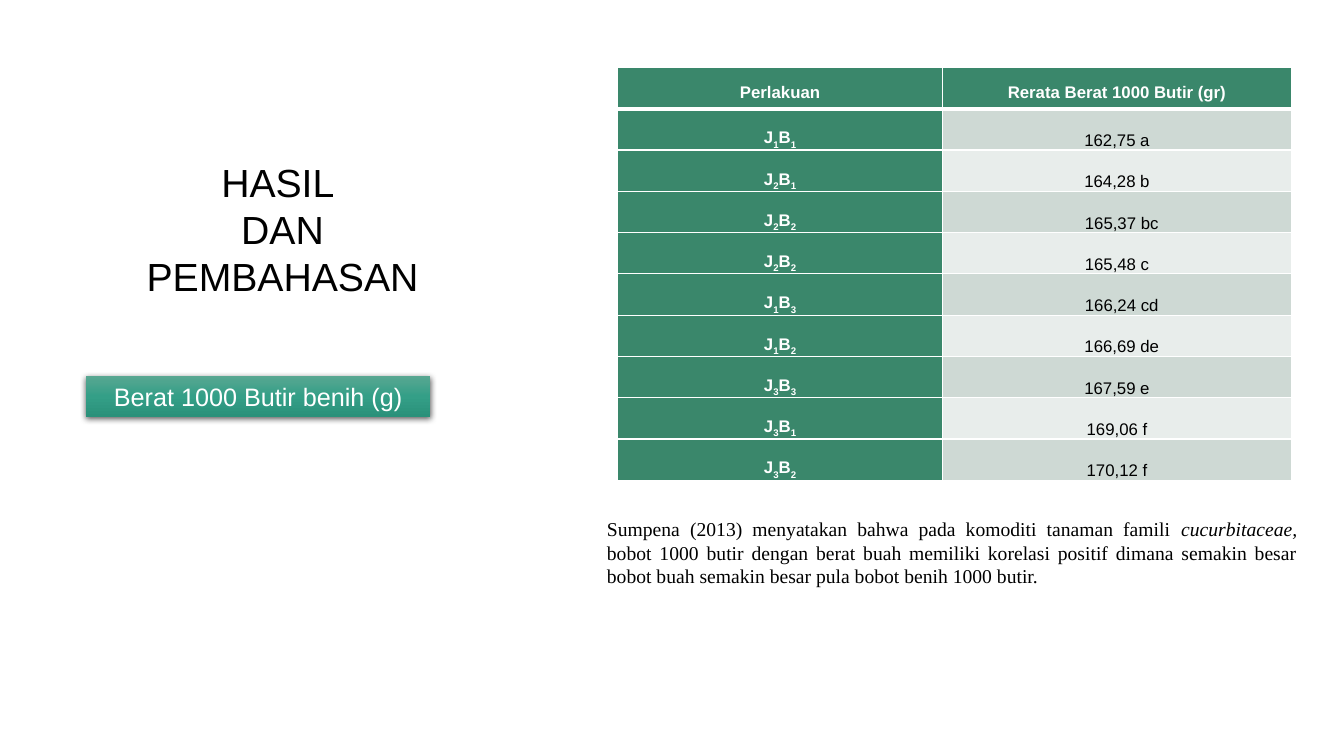
from copy import deepcopy
from dataclasses import dataclass

from pptx import Presentation
from pptx.dml.color import RGBColor
from pptx.enum.shapes import MSO_SHAPE
from pptx.enum.text import MSO_ANCHOR, MSO_AUTO_SIZE, PP_ALIGN
from pptx.oxml import parse_xml
from pptx.oxml.ns import nsdecls, qn
from pptx.util import Cm, Pt

RECT = MSO_SHAPE.RECTANGLE
TOP, MIDDLE, BOTTOM = MSO_ANCHOR.TOP, MSO_ANCHOR.MIDDLE, MSO_ANCHOR.BOTTOM
CENTER, JUSTIFY = PP_ALIGN.CENTER, PP_ALIGN.JUSTIFY
NO_FIT = MSO_AUTO_SIZE.NONE

# Content
TITLE = ["HASIL ", "DAN", "PEMBAHASAN"]
BADGE = "Berat 1000 Butir benih (g)"
QUOTE = [
    ("Sumpena (2013) menyatakan bahwa pada komoditi tanaman famili ", False),
    ("cucurbitaceae, ", True),
    ("bobot 1000 butir dengan berat buah memiliki korelasi positif dimana "
     "semakin besar bobot buah semakin besar pula bobot benih 1000 butir.", False),
]
HEAD = ["Perlakuan", "Rerata Berat 1000 Butir (gr)"]
ROWS = [
    ("J1B1", "162,75", "a"),
    ("J2B1", "164,28", "b"),
    ("J2B2", "165,37", "bc"),
    ("J2B2", "165,48", "c"),
    ("J1B3", "166,24", "cd"),
    ("J1B2", "166,69", "de"),
    ("J3B3", "167,59", "e"),
    ("J3B1", "169,06", "f"),
    ("J3B2", "170,12", "f"),
]

# Places: left, top, width, height
TITLE_BOX = (3.4, 3.86, 7.44, 3.84)
BADGE_BOX = (2.16, 9.47, 8.69, 1.03)
QUOTE_BOX = (15.04, 12.9, 17.91, 3.25)
GRID_AT = (15.57, 1.7)
COLS = (8.18, 8.8)
ROW = 1.04
PAD, SHIFT = 0.17, 0.24


@dataclass(frozen=True)
class Theme:
    sans: str = "Arial"
    serif: str = "Times New Roman"
    dark: str = "000000"
    light: str = "FFFFFF"
    green: str = "3A876B"
    bands: tuple = ("CED9D4", "E8EDEB")
    blend: tuple = ((0, "59A792"), (0.5, "349F87"), (1, "2A917A"))
    title: int = 28
    badge: int = 18
    quote: int = 14
    cell: int = 12
    thin: int = 1
    thick: int = 3


T = Theme()


def style(par, size, color, face=T.sans, align=CENTER, bold=False):
    par.alignment = align
    for run in par.runs:
        font = run.font
        font.name, font.size, font.bold = face, Pt(size), bold
        font.color.rgb = RGBColor.from_string(color)


def place(shape, box):
    shape.left, shape.top, shape.width, shape.height = map(Cm, box)
    frame = shape.text_frame
    frame.word_wrap = True
    frame.auto_size = NO_FIT
    frame.vertical_anchor = TOP
    return frame


def border(cell, row):
    edges = {"L": T.thin, "R": T.thin,
             "T": T.thick if row == 1 else T.thin,
             "B": T.thick if row == 0 else T.thin}
    props = cell._tc.get_or_add_tcPr()
    for side, width in edges.items():
        props.append(parse_xml(
            f'<a:ln{side} {nsdecls("a")} w="{Pt(width)}"><a:solidFill>'
            f'<a:srgbClr val="{T.light}"/></a:solidFill></a:ln{side}>'))


def dress(cell, row, fill, color, bold, shift=0):
    border(cell, row)
    cell.fill.solid()
    cell.fill.fore_color.rgb = RGBColor.from_string(fill)
    cell.margin_left, cell.margin_right = Cm(PAD + shift), Cm(PAD)
    cell.margin_top = cell.margin_bottom = 0
    cell.vertical_anchor = BOTTOM if row else MIDDLE
    par = cell.text_frame.paragraphs[0]
    par.line_spacing = 1.5
    style(par, T.cell, color, bold=bold)


def add_title(slide):
    frame = place(slide.shapes.title, TITLE_BOX)
    frame.text = "\n".join(TITLE)
    for par in frame.paragraphs:
        style(par, T.title, T.dark)


def add_quote(slide):
    frame = place(slide.placeholders[1], QUOTE_BOX)
    par = frame.paragraphs[0]
    for text, slant in QUOTE:
        run = par.add_run()
        run.text = text
        run.font.italic = slant
    style(par, T.quote, T.dark, T.serif, JUSTIFY)
    par.space_before = Pt(0)
    props = par._p.get_or_add_pPr()
    props.set("marL", "0")
    props.set("indent", "0")
    props.append(parse_xml(f'<a:buNone {nsdecls("a")}/>'))


def add_badge(slide):
    badge = slide.shapes.add_shape(RECT, *map(Cm, BADGE_BOX))
    badge.line.fill.background()

    # Three-stop gradient, light at the top
    fill = badge.fill
    fill.gradient()
    fill.gradient_angle = 270
    props = badge.element.spPr
    stops = props.find(".//" + qn("a:gsLst"))
    stops.append(deepcopy(stops[0]))
    for stop, (spot, color) in zip(fill.gradient_stops, T.blend):
        stop.position = spot
        stop.color.rgb = RGBColor.from_string(color)

    # Soft shadow below
    badge.shadow.inherit = False
    props.find(qn("a:effectLst")).append(parse_xml(
        f'<a:outerShdw {nsdecls("a")} blurRad="{Pt(4.5)}" dist="{Pt(1.5)}" '
        f'dir="5400000" algn="ctr" rotWithShape="0"><a:srgbClr val="{T.dark}">'
        '<a:alpha val="63000"/></a:srgbClr></a:outerShdw>'))

    frame = badge.text_frame
    frame.text = BADGE
    frame.vertical_anchor = MIDDLE
    style(frame.paragraphs[0], T.badge, T.light)


def add_grid(slide):
    count = len(ROWS) + 1
    size = (sum(COLS), ROW * count)
    grid = slide.shapes.add_table(count, len(COLS), *map(Cm, GRID_AT + size)).table
    for col, width in zip(grid.columns, COLS):
        col.width = Cm(width)
    for line in grid.rows:
        line.height = Cm(ROW)

    # Header
    for col, text in enumerate(HEAD):
        cell = grid.cell(0, col)
        cell.text_frame.text = text
        dress(cell, 0, T.green, T.light, True)

    # Body: digits of the treatment code are subscripts
    for row, (code, mean, group) in enumerate(ROWS, 1):
        cell = grid.cell(row, 0)
        for char in code:
            run = cell.text_frame.paragraphs[0].add_run()
            run.text = char
            if char.isdigit():
                run._r.get_or_add_rPr().set("baseline", "-25000")
        dress(cell, row, T.green, T.light, True)

        cell = grid.cell(row, 1)
        cell.text_frame.text = f"{mean} {group}"
        shift = SHIFT if len(group) > 1 else 0
        dress(cell, row, T.bands[(row - 1) % 2], T.dark, False, shift)


def main():
    deck = Presentation()
    deck.slide_width, deck.slide_height = Cm(33.87), Cm(19.05)
    slide = deck.slides.add_slide(deck.slide_layouts[1])
    add_title(slide)
    add_quote(slide)
    add_badge(slide)
    add_grid(slide)
    deck.save("out.pptx")


if __name__ == "__main__":
    main()
